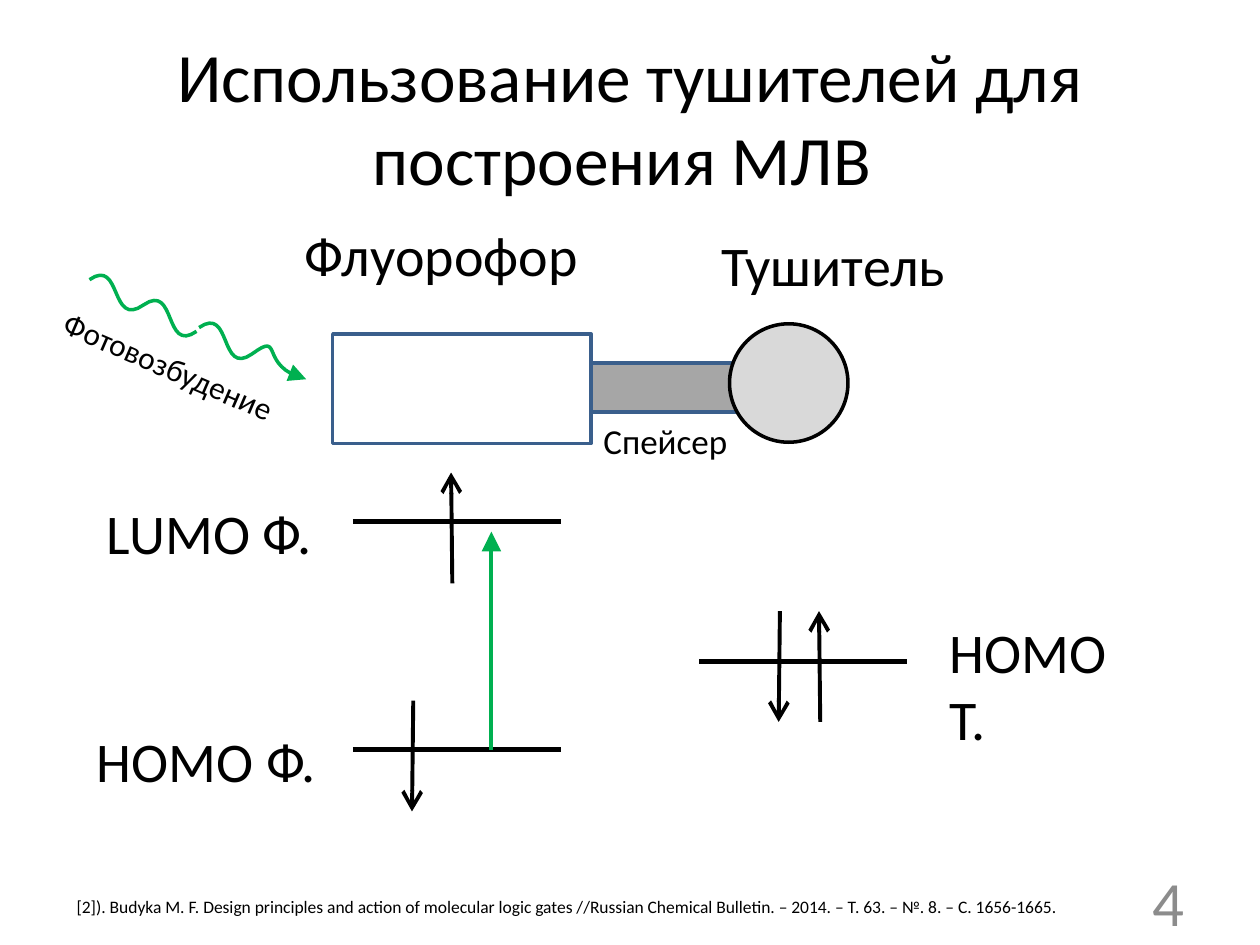
from pptx import Presentation
from pptx.dml.color import RGBColor
from pptx.enum.shapes import MSO_CONNECTOR, MSO_SHAPE
from pptx.enum.text import MSO_ANCHOR, PP_ALIGN
from pptx.oxml.ns import qn
from pptx.util import Inches, Pt
from lxml.etree import SubElement

BLACK, GREEN, BLUE = "000000", "00B050", "3A5F8C"


def paint(color, code):
    color.rgb = RGBColor.from_string(code)


def style(frame, size, code=BLACK):
    for run in frame.paragraphs[0].runs:
        run.font.name = "Calibri"
        run.font.size = Pt(size)
        paint(run.font.color, code)


def stroke(item, code, width, tip=None):
    item.line.width = Pt(width)
    paint(item.line.color, code)
    if tip:
        SubElement(item.line._get_or_add_ln(), qn("a:tailEnd"),
                   type=tip, w="lg", len="lg")


def add_title(slide, text):
    title = slide.shapes.title
    title.left, title.top = Inches(0.5), Inches(0.3)
    title.width, title.height = Inches(9), Inches(1.25)
    frame = title.text_frame
    frame.text = text
    frame.vertical_anchor = MSO_ANCHOR.MIDDLE
    frame.paragraphs[0].alignment = PP_ALIGN.CENTER
    style(frame, 39.6)


def add_label(slide, text, box, size, code=BLACK, wrap=False, turn=0):
    label = slide.shapes.add_textbox(*map(Inches, box))
    label.rotation = turn
    frame = label.text_frame
    frame.word_wrap = wrap
    frame.text = text
    style(frame, size, code)
    return frame


def add_block(slide, kind, box, fill, edge):
    block = slide.shapes.add_shape(kind, *map(Inches, box))
    block.shadow.inherit = False
    block.fill.solid()
    paint(block.fill.fore_color, fill)
    stroke(block, edge, 2)


def add_line(slide, start, end, code, width, tip=None):
    line = slide.shapes.add_connector(
        MSO_CONNECTOR.STRAIGHT, *map(Inches, (*start, *end)))
    stroke(line, code, width, tip)
    SubElement(line._element.spPr, qn("a:effectLst"))


def bezier(a, b, c, d, steps=16):
    """Points along a cubic curve, without its first point."""
    for i in range(1, steps + 1):
        t = i / steps
        u = 1 - t
        yield tuple(u**3 * p + 3 * u * u * t * q + 3 * u * t * t * r + t**3 * s
                    for p, q, r, s in zip(a, b, c, d))


def add_wave(slide, knots, tip=None):
    knots = [(Inches(x), Inches(y)) for x, y in knots]
    points = [p for i in range(0, len(knots) - 1, 3)
              for p in bezier(*knots[i:i + 4])]
    pen = slide.shapes.build_freeform(*knots[0])
    pen.add_line_segments(points, close=False)
    wave = pen.convert_to_shape()
    wave.shadow.inherit = False
    wave.fill.background()
    stroke(wave, GREEN, 2, tip)


def main():
    deck = Presentation()
    deck.slide_width, deck.slide_height = Inches(10), Inches(7.5)
    slide = deck.slides.add_slide(deck.slide_layouts[5])
    add_title(slide, "Использование тушителей для построения МЛВ ")

    # Molecule: spacer behind fluorophore and quencher
    rect = MSO_SHAPE.RECTANGLE
    add_block(slide, rect, (4.37, 2.88, 1.65, 0.39), "A6A6A6", BLUE)
    add_block(slide, rect, (2.64, 2.65, 2.05, 0.87), "FFFFFF", BLUE)
    add_block(slide, MSO_SHAPE.OVAL, (5.79, 2.57, 0.94, 0.94), "D9D9D9", BLACK)

    # Energy levels
    for x, y in ((2.8, 5.95), (5.55, 5.25), (2.8, 4.14)):
        add_line(slide, (x, y), (x + 1.65, y), BLACK, 3)

    # Electron spins: x, start and end height
    for x, start, end in ((3.59, 4.63, 3.75), (3.28, 5.56, 6.44),
                          (6.51, 5.73, 4.85), (6.19, 4.85, 5.73)):
        add_line(slide, (x, start), (x - 0.01, end), BLACK, 2.25, "arrow")

    # Excitation: light wave and electron jump
    add_wave(slide, [(0.71, 2.22), (0.97, 2.04), (0.87, 2.61), (1.14, 2.42),
                     (1.4, 2.24), (1.3, 2.81), (1.56, 2.63)])
    add_wave(slide, [(1.58, 2.6), (1.84, 2.42), (1.74, 2.99), (2, 2.81),
                     (2.26, 2.62), (2.04, 2.91), (2.43, 3.01)], "triangle")
    add_line(slide, (3.9, 5.95), (3.9, 4.22), GREEN, 2.25, "triangle")

    # Labels
    for text, x, y, width in (("Флуорофор", 2.32, 1.7, 2.39),
                              ("Тушитель", 5.63, 1.78, 1.99),
                              ("HOMO Ф.", 0.67, 5.72, 1.96),
                              ("LUMO Ф.", 0.75, 3.91, 1.85)):
        add_label(slide, text, (x, y, width, 0.64), 32)
    add_label(slide, "HOMO T.", (7.44, 4.85, 1.75, 0.64), 32, wrap=True)
    add_label(slide, "Спейсер", (4.69, 3.28, 1.19, 0.44), 20)
    add_label(slide, "Фотовозбудение", (0.35, 2.71, 2, 0.4), 18, turn=23.4)

    # Reference and page number
    add_label(slide, "[2]). Budyka M. F. Design principles and action of "
              "molecular logic gates //Russian Chemical Bulletin. – 2014. – "
              "Т. 63. – №. 8. – С. 1656-1665.",
              (0.51, 7.06, 8.43, 0.27), 10, wrap=True)
    page = add_label(slide, "4", (7.17, 6.95, 2.33, 0.4), 36, "8C8C8C", True)
    page.vertical_anchor = MSO_ANCHOR.MIDDLE
    page.paragraphs[0].alignment = PP_ALIGN.RIGHT

    deck.save("out.pptx")


if __name__ == "__main__":
    main()
